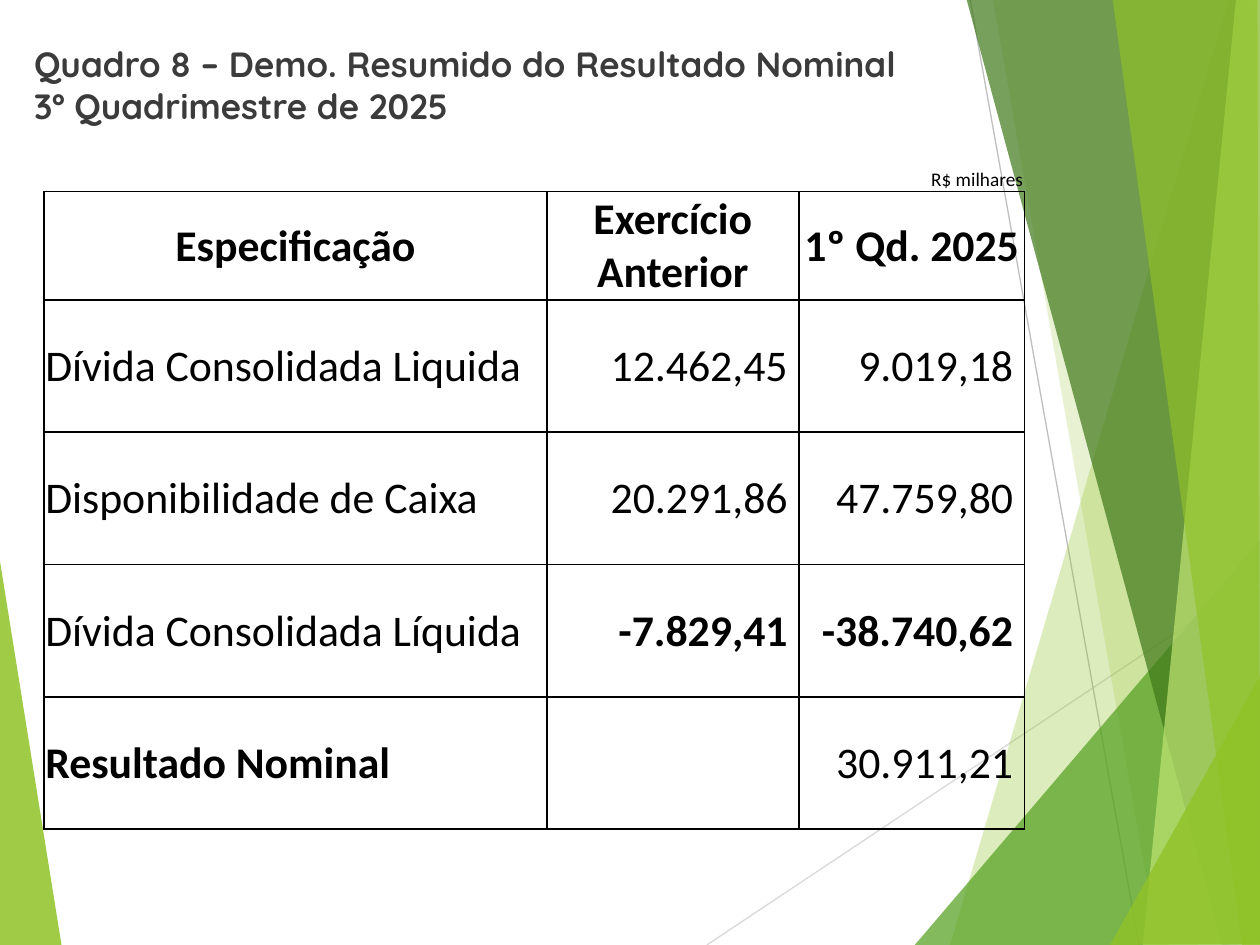
from dataclasses import dataclass

from lxml.etree import SubElement
from pptx import Presentation
from pptx.dml.color import RGBColor
from pptx.enum.shapes import MSO_CONNECTOR
from pptx.enum.text import MSO_ANCHOR, MSO_AUTO_SIZE, PP_ALIGN
from pptx.oxml.ns import qn
from pptx.oxml.xmlchemy import OxmlElement
from pptx.slide import Slide
from pptx.table import _Cell as Cell
from pptx.text.text import TextFrame
from pptx.util import Inches, Pt

BLACK = RGBColor(0x00, 0x00, 0x00)
TITLE_GRAY = RGBColor(0x3B, 0x3B, 0x3B)
LIGHT_GRAY = RGBColor(0xD9, 0xD9, 0xD9)
MIDDLE_GRAY = RGBColor(0xBF, 0xBF, 0xBF)
LIME = RGBColor(0x90, 0xC2, 0x26)
GREEN = RGBColor(0x54, 0xA0, 0x21)
DARK_GREEN = RGBColor(0x3F, 0x78, 0x19)
PALE_LIME = RGBColor(0xC0, 0xE4, 0x74)

Point = tuple[float, float]


@dataclass(frozen=True)
class Facet:
    points: tuple[Point, ...]
    color: RGBColor
    opacity: int


@dataclass(frozen=True)
class Ray:
    start: Point
    end: Point
    color: RGBColor


@dataclass(frozen=True)
class Entry:
    label: str
    previous: str
    current: str
    bold_label: bool = False
    bold_values: bool = False


LEFT_FACET = Facet(((-0.01, 4.39), (0.49, 7.51), (-0.01, 7.5)), LIME, 85)
RAYS = (
    Ray((5.61, 7.5), (10.01, 4.57), LIGHT_GRAY),
    Ray((7.7, 0), (9.04, 7.5), MIDDLE_GRAY),
)
RIGHT_FACETS = (
    Facet(((9.75, 0), (7.54, 7.5), (10.02, 7.51), (10.01, 0.01)), LIME, 30),
    Facet(((7.88, -0.01), (9.19, 7.5), (10.01, 7.5), (10.01, -0.01)), LIME, 20),
    Facet(((7.26, 7.5), (10, 4.29), (10.01, 7.5)), GREEN, 72),
    Facet(((7.67, -0.01), (9.7, 7.5), (10.01, 7.49), (10.01, -0.01)), DARK_GREEN, 70),
    Facet(((9.81, -0.01), (9.07, 7.5), (10.01, 7.5), (10, -0.01)), PALE_LIME, 70),
    Facet(((8.83, -0.01), (9.86, 7.5), (10, 7.5), (9.98, -0.01)), LIME, 65),
    Facet(((8.81, 7.5), (10.01, 5.35), (10.01, 7.49)), LIME, 80),
)
COLUMN_WIDTHS = (2.33, 1.3, 0.36, 2, 1.79)
ROW_HEIGHTS = (0.58, 0.86, 1.05, 1.05, 1.05, 1.05)
LABEL_COLUMN, LABEL_END, PREVIOUS_COLUMN, CURRENT_COLUMN = 0, 2, 3, 4
ENTRIES = (
    Entry("Dívida Consolidada Liquida", "12.462,45", "9.019,18"),
    Entry("Disponibilidade de Caixa", "20.291,86", "47.759,80"),
    Entry("Dívida Consolidada Líquida", "-7.829,41", "-38.740,62", bold_values=True),
    Entry("Resultado Nominal", "", "30.911,21", bold_label=True),
)


def write_text(frame: TextFrame, text: str, *, size: float = 25, font: str = "Calibri",
               color: RGBColor = BLACK, bold: bool = False,
               align: PP_ALIGN = PP_ALIGN.LEFT) -> None:
    frame.text = text
    frame.word_wrap = True
    paragraph = frame.paragraphs[0]
    paragraph.alignment = align
    for run in paragraph.runs:
        run.font.size = Pt(size)
        run.font.name = font
        run.font.color.rgb = color
        run.font.bold = bold


def draw_facet(slide: Slide, facet: Facet) -> None:
    points = [(Inches(x), Inches(y)) for x, y in facet.points]
    builder = slide.shapes.build_freeform(*points[0])
    builder.add_line_segments(points[1:], close=True)
    shape = builder.convert_to_shape()
    shape.shadow.inherit = False
    shape.line.fill.background()
    shape.fill.solid()
    shape.fill.fore_color.rgb = facet.color
    color = shape.element.spPr.find(qn("a:solidFill"))[0]
    SubElement(color, qn("a:alpha"), val=str(facet.opacity * 1000))


def draw_ray(slide: Slide, ray: Ray) -> None:
    ends = [Inches(value) for value in ray.start + ray.end]
    connector = slide.shapes.add_connector(MSO_CONNECTOR.STRAIGHT, *ends)
    connector.line.color.rgb = ray.color
    connector.line.width = Pt(0.75)
    SubElement(connector.element.spPr, qn("a:effectLst"))


def set_borders(cell: Cell, visible_sides: str) -> None:
    properties = cell.fill.background() or cell._tc.get_or_add_tcPr()
    for index, side in enumerate("LRTB"):
        line = OxmlElement(f"a:ln{side}")
        line.set("w", str(Pt(1)))
        if side in visible_sides:
            fill = SubElement(line, qn("a:solidFill"))
            SubElement(fill, qn("a:srgbClr"), val=str(BLACK))
        else:
            SubElement(line, qn("a:noFill"))
        properties.insert(index, line)


def write_cell(cell: Cell, text: str, *, bold: bool = False, size: float = 25,
               align: PP_ALIGN = PP_ALIGN.LEFT, right: float = 0.01,
               anchor: MSO_ANCHOR = MSO_ANCHOR.MIDDLE) -> None:
    cell.margin_left = cell.margin_top = Inches(0.01)
    cell.margin_right = Inches(right)
    cell.margin_bottom = 0
    cell.vertical_anchor = anchor
    write_text(cell.text_frame, text, size=size, bold=bold, align=align)


def draw_table(slide: Slide) -> None:
    frame = slide.shapes.add_table(len(ROW_HEIGHTS), len(COLUMN_WIDTHS), Inches(0.35),
                                   Inches(0.94), Inches(sum(COLUMN_WIDTHS)),
                                   Inches(sum(ROW_HEIGHTS)))
    table = frame.table
    table.first_row = table.horz_banding = False
    for column, width in zip(table.columns, COLUMN_WIDTHS):
        column.width = Inches(width)
    for row, height in zip(table.rows, ROW_HEIGHTS):
        row.height = Inches(height)
    for row in range(1, len(ROW_HEIGHTS)):
        table.cell(row, LABEL_COLUMN).merge(table.cell(row, LABEL_END))
    for row in range(len(ROW_HEIGHTS)):
        for column in range(len(COLUMN_WIDTHS)):
            cell = table.cell(row, column)
            set_borders(cell, "B" if row == 0 else "TB" if cell.is_spanned else "LRTB")

    write_cell(table.cell(0, CURRENT_COLUMN), "R$ milhares", size=11,
               align=PP_ALIGN.RIGHT, anchor=MSO_ANCHOR.BOTTOM)
    headings = {LABEL_COLUMN: "Especificação", PREVIOUS_COLUMN: "Exercício Anterior",
                CURRENT_COLUMN: "1º Qd. 2025"}
    for column, heading in headings.items():
        write_cell(table.cell(1, column), heading, bold=True, align=PP_ALIGN.CENTER)
    for row, entry in enumerate(ENTRIES, start=2):
        write_cell(table.cell(row, LABEL_COLUMN), entry.label, bold=entry.bold_label)
        for column, value in ((PREVIOUS_COLUMN, entry.previous),
                              (CURRENT_COLUMN, entry.current)):
            write_cell(table.cell(row, column), value, bold=entry.bold_values,
                       align=PP_ALIGN.RIGHT, right=0.09)


def draw_title(slide: Slide) -> None:
    title = slide.shapes.title
    title.element.getparent().append(title.element)
    title.left, title.top = Inches(0.17), Inches(0.29)
    title.width, title.height = Inches(9.66), Inches(1.15)
    title.text_frame.auto_size = MSO_AUTO_SIZE.NONE
    title.text_frame.vertical_anchor = MSO_ANCHOR.TOP
    write_text(title.text_frame,
               "Quadro 8 – Demo. Resumido do Resultado Nominal\v3º Quadrimestre de 2025",
               size=20, font="Quicksand", color=TITLE_GRAY, bold=True)


def main() -> None:
    presentation = Presentation()
    presentation.slide_width, presentation.slide_height = Inches(10), Inches(7.5)
    slide = presentation.slides.add_slide(presentation.slide_layouts[5])
    draw_facet(slide, LEFT_FACET)
    for ray in RAYS:
        draw_ray(slide, ray)
    for facet in RIGHT_FACETS:
        draw_facet(slide, facet)
    draw_title(slide)
    draw_table(slide)
    presentation.save("out.pptx")


if __name__ == "__main__":
    main()
